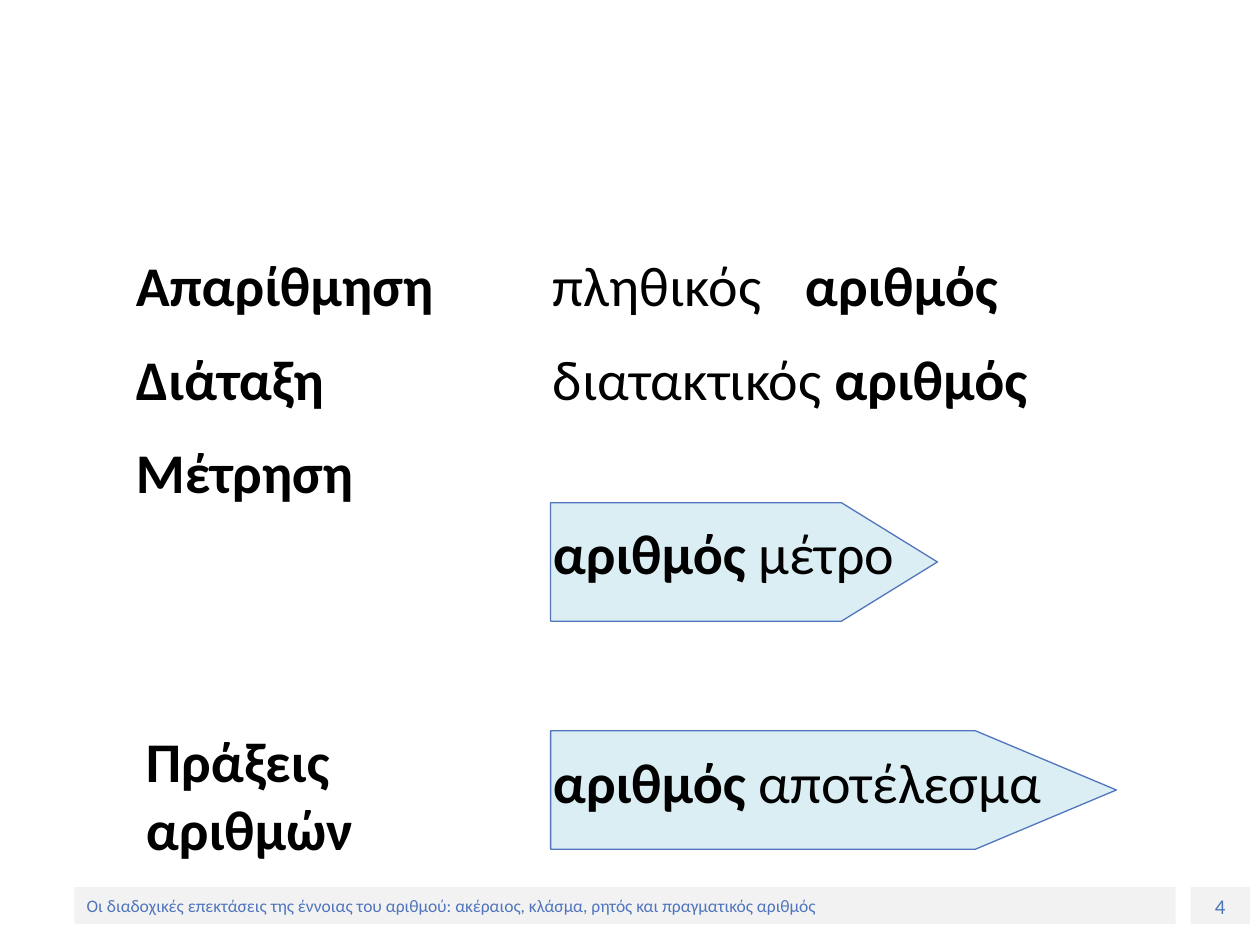
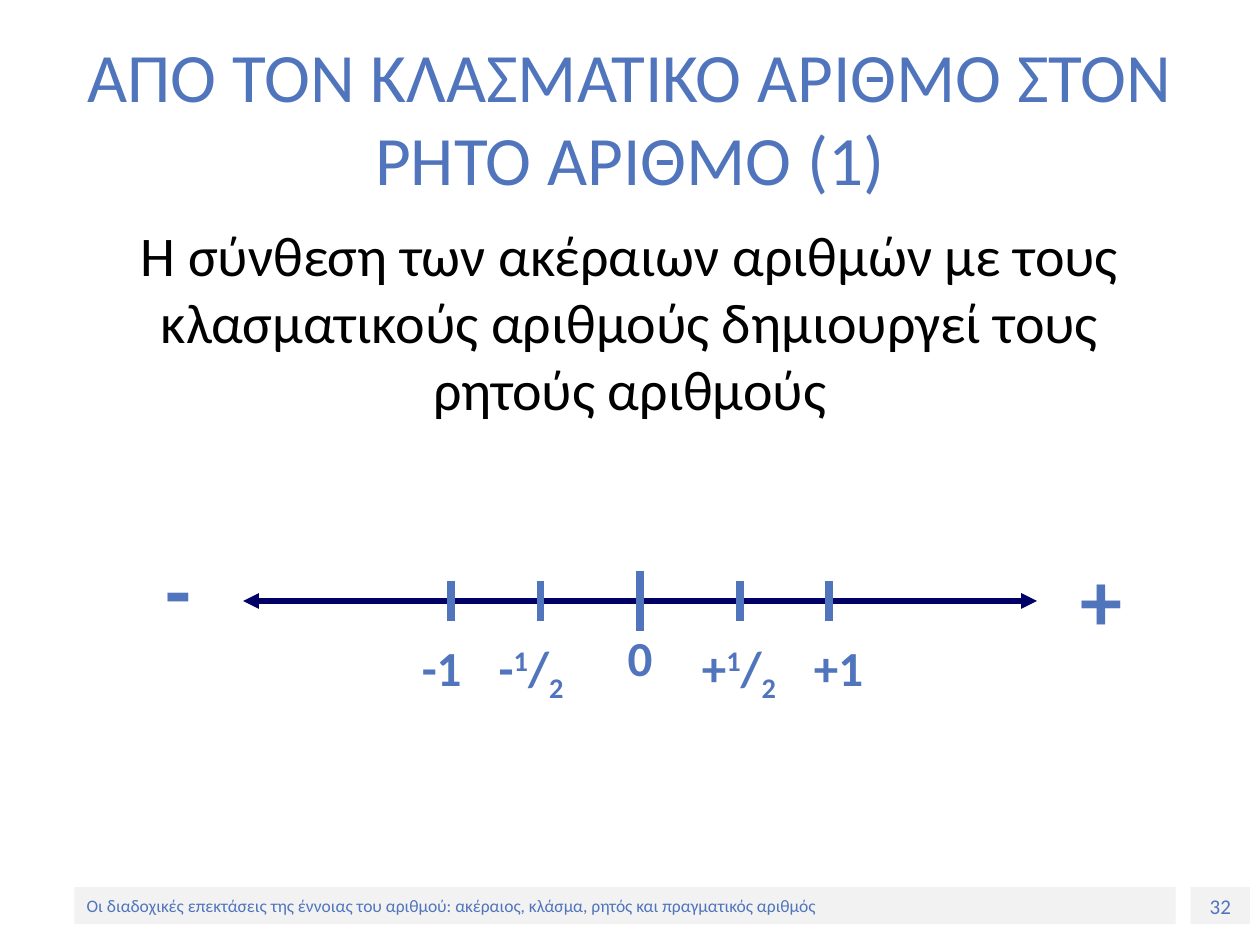
from lxml import etree
from pptx import Presentation
from pptx.dml.color import RGBColor
from pptx.enum.shapes import MSO_CONNECTOR, MSO_SHAPE
from pptx.enum.text import MSO_ANCHOR, PP_ALIGN
from pptx.oxml.ns import qn
from pptx.util import Inches, Pt

STRAIGHT = MSO_CONNECTOR.STRAIGHT
RECTANGLE, PENTAGON = MSO_SHAPE.RECTANGLE, MSO_SHAPE.PENTAGON
TOP, MIDDLE = MSO_ANCHOR.TOP, MSO_ANCHOR.MIDDLE
LEFT, CENTER = PP_ALIGN.LEFT, PP_ALIGN.CENTER

COLORS = {"ink": "000000", "blue": "5075BC", "navy": "000066", "band": "F2F2F2", "arrow": "DBEEF4"}
FONT = "Calibri"
WIDTH, HEIGHT = Inches(10), Inches(7.5)
COLUMNS, ROWS = 100, 75
COLUMN, ROW = WIDTH / COLUMNS, HEIGHT / ROWS

FOOTER = "Οι διαδοχικές επεκτάσεις της έννοιας του αριθμού: ακέραιος, κλάσμα, ρητός και πραγματικός αριθμός"
BOLD = {"bold": True}
RAISED, LOWERED = {"baseline": 30000}, {"baseline": -25000}
HALF = [("1", RAISED), ("/", {}), ("2", LOWERED)]


def place(left, top, width, height):
    """Turn a box in grid columns and rows into slide lengths."""
    return round(left * COLUMN), round(top * ROW), round(width * COLUMN), round(height * ROW)


def color(name):
    """Look up a deck colour."""
    return RGBColor.from_string(COLORS[name])


def write(shape, paragraphs, size=32, ink="ink", bold=False, align=LEFT, anchor=TOP, space=0):
    """Fill a shape with paragraphs, each a list of (text, format) spans."""
    frame = shape.text_frame
    frame.word_wrap = True
    frame.vertical_anchor = anchor
    for index, spans in enumerate(paragraphs):
        para = frame.add_paragraph() if index else frame.paragraphs[0]
        para.alignment = align
        para.space_before = Pt(space)
        for text, style in spans:
            for number, line in enumerate(text.split("\n")):
                if number:
                    para.add_line_break()
                span = para.add_run()
                span.text = line
                span.font.name = FONT
                span.font.size = Pt(size)
                span.font.bold = style.get("bold", bold)
                span.font.color.rgb = color(ink)
                if "baseline" in style:
                    span.font._element.set("baseline", str(style["baseline"]))


def add_text(shapes, box, paragraphs, **style):
    """Add a wrapped text box."""
    write(shapes.add_textbox(*place(*box)), paragraphs, **style)


def add_shape(shapes, kind, box, fill, line=None):
    """Add a flat preset shape."""
    shape = shapes.add_shape(kind, *place(*box))
    shape.shadow.inherit = False
    shape.fill.solid()
    shape.fill.fore_color.rgb = color(fill)
    if line:
        shape.line.color.rgb = color(line)
        shape.line.width = Pt(0.75)
    else:
        shape.line.fill.background()
    return shape


def add_line(shapes, start, end, ink, width, arrows=False):
    """Add a straight line, with arrowheads at both ends if asked."""
    x1, y1, x2, y2 = place(*start, *end)
    line = shapes.add_connector(STRAIGHT, x1, y1, x2, y2)
    line.line.color.rgb = color(ink)
    line.line.width = Pt(width)
    if arrows:
        outline = line.line._get_or_add_ln()
        for tip in ("a:headEnd", "a:tailEnd"):
            etree.SubElement(outline, qn(tip), type="triangle")
    etree.SubElement(line._element.spPr, qn("a:effectLst"))


def add_footer(page, box, number):
    """Draw the footer band and the page number."""
    left, top, width, height = box
    band = add_shape(page.shapes, RECTANGLE, (left, top, width - 5.9, height), "band")
    write(band, [[(FOOTER, {})]], size=10, ink="blue", anchor=MIDDLE)
    badge = add_shape(page.shapes, RECTANGLE, (left + width - 4.7, top, 4.7, height), "band")
    write(badge, [[(str(number), {})]], size=12, ink="blue", align=CENTER, anchor=MIDDLE)


def add_page(deck, number):
    """Add a blank page with its footer."""
    page = deck.slides.add_slide(deck.slide_layouts[6])
    add_footer(page, (5.9, 70.4, 93.3, 2.95), number)
    return page


def add_uses(page, box):
    """Set the uses of numbers beside the kinds of number they give."""
    left, top, width, height = box
    kinds = left + 33.1
    results = [
        (20.5, 30.7, 0.81, "μέτρο"),
        (38.6, 44.9, 1.19, "αποτέλεσμα"),
    ]
    for drop, length, point, word in results:
        arrow = add_shape(page.shapes, PENTAGON, (kinds + 0.8, top + drop, length, 9.4), "arrow", "blue")
        arrow.adjustments[0] = point
        add_text(page.shapes, (kinds, top + drop + 0.8, length + 4, 6.4),
                 [[("αριθμός ", BOLD), (word, {})]])
    uses = ["Απαρίθμηση", "Διάταξη", "Μέτρηση"]
    add_text(page.shapes, (left, top, 37, 27.9), [[(use, BOLD)] for use in uses], space=15)
    add_text(page.shapes, (left + 0.8, top + height - 11.7, 38.6, 11.7), [[("Πράξεις\nαριθμών", BOLD)]])
    add_text(page.shapes, (kinds, top, width - 33.1, 14.3),
             [[("πληθικός\t", {}), ("αριθμός", BOLD)],
              [("διατακτικός", {}), (" αριθμός", BOLD)]], space=15)


def add_heading(page, box, title, body):
    """Place the centred title with its statement below."""
    left, top, width, height = box
    add_text(page.shapes, (left, top, width, 12.5), [[(title, {})]],
             size=39.6, ink="blue", align=CENTER, anchor=MIDDLE)
    add_text(page.shapes, (left, top + 14, width, height - 14), [[(body, {})]], align=CENTER)


def add_number_line(page, box):
    """Draw the number line with ticks and labels around its zero."""
    left, top, width, height = box
    shapes = page.shapes.add_group_shape().shapes
    axis, zero = top + 5.5, left + width / 2
    add_line(shapes, (left + 8.7, axis), (left + width - 8.7, axis), "navy", 3, arrows=True)
    marks = [
        (-15, -15.75, 1.6, [("-1", {})]),
        (-7.9, -8.65, 1.6, [("-", {})] + HALF),
        (0, 0, 2.35, [("0", {})]),
        (7.9, 7.85, 1.6, [("+", {})] + HALF),
        (15, 15.75, 1.6, [("+1", {})]),
    ]
    for tick, label, reach, spans in marks:
        add_line(shapes, (zero + tick, axis - reach), (zero + tick, axis + reach), "blue", 4.5)
        drop = 2.4 if tick else 1.6
        add_text(shapes, (zero + label - 4.75, axis + drop, 9.5, 5.7), [spans],
                 size=28, ink="blue", bold=True, align=CENTER)
    for sign, start, rise in (("-", left, 0), ("+", left + width - 7.1, 0.8)):
        add_text(shapes, (start, top + rise, 7.1, 9), [[(sign, {})]],
                 size=48, ink="blue", bold=True, align=CENTER)


def main():
    """Build and save the deck."""
    deck = Presentation()
    deck.slide_width, deck.slide_height = WIDTH, HEIGHT
    add_uses(add_page(deck, 4), (9.8, 19.4, 84.3, 49.5))
    rational = add_page(deck, 32)
    add_heading(rational, (5, 3, 90, 63.5), "ΑΠΟ ΤΟΝ ΚΛΑΣΜΑΤΙΚΟ ΑΡΙΘΜΟ ΣΤΟΝ ΡΗΤΟ ΑΡΙΘΜΟ (1)",
                "Η σύνθεση των ακέραιων αριθμών με τους κλασματικούς αριθμούς "
                "δημιουργεί τους ρητούς αριθμούς")
    add_number_line(rational, (10.6, 42.2, 80.4, 13.6))
    deck.save("out.pptx")


if __name__ == "__main__":
    main()
